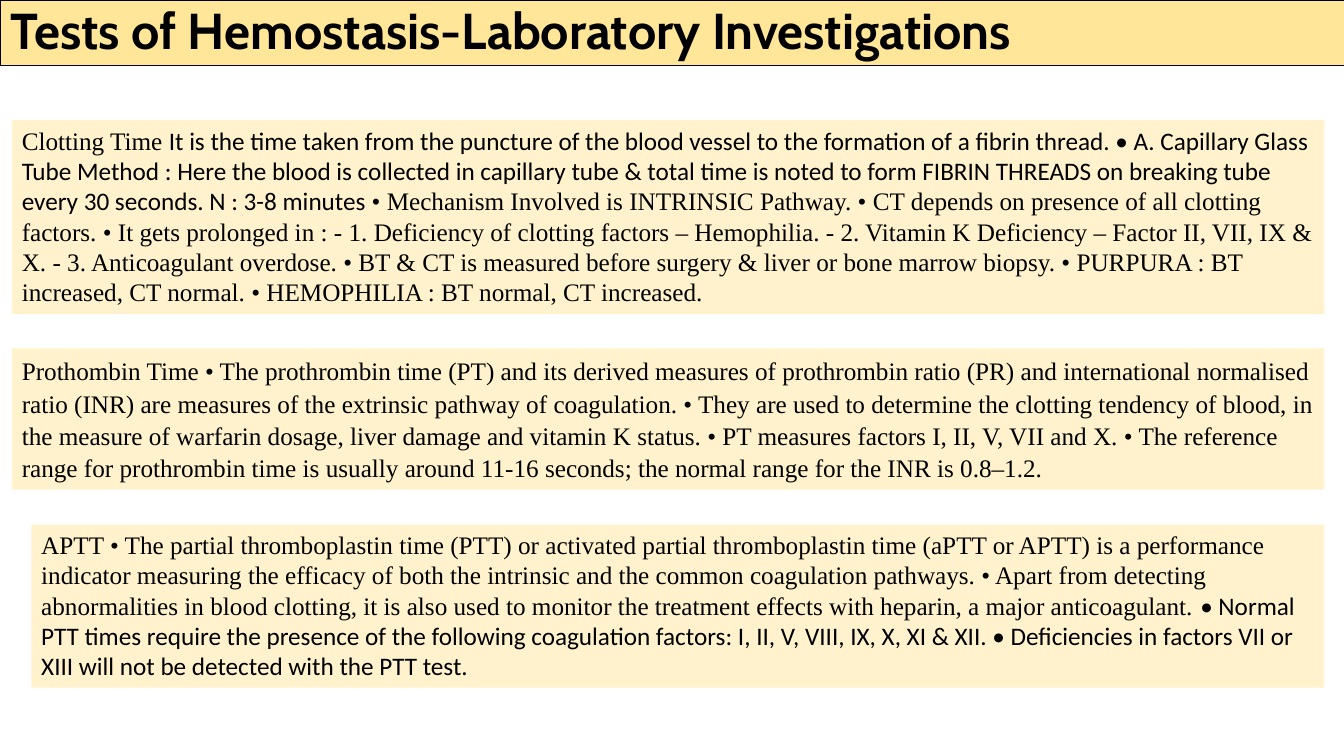
"""Build the slide on laboratory tests of hemostasis."""
from pptx import Presentation
from pptx.dml.color import RGBColor
from pptx.enum import text
from pptx.util import Cm, Pt

BLACK = RGBColor(0x00, 0x00, 0x00)
GOLD = RGBColor(0xFF, 0xE6, 0x99)
CREAM = RGBColor(0xFF, 0xF2, 0xCC)
SERIF, SANS = "Times New Roman", "Calibri"
RIGHT_EDGE = 33.38

TITLE = "Tests of Hemostasis-Laboratory Investigations"
TESTS = [
    {"left": 0.3, "top": 3.03, "height": 4.88, "spacing": 1.0, "after": 0, "spans": [
        (SERIF, "Clotting Time "),
        (SANS, "It is the time taken from the puncture of the blood vessel to the formation "
               "of a fibrin thread. • A. Capillary Glass Tube Method : Here the blood is "
               "collected in capillary tube & total time is noted to form FIBRIN THREADS on "
               "breaking tube every 30 seconds. N : 3-8 minutes "),
        (SERIF, "• Mechanism Involved is INTRINSIC Pathway. • CT depends on presence of all "
                "clotting factors. • It gets prolonged in : - 1. Deficiency of clotting "
                "factors – Hemophilia. - 2. Vitamin K Deficiency – Factor II, VII, IX & X. "
                "- 3. Anticoagulant overdose. • BT & CT is measured before surgery & liver "
                "or bone marrow biopsy. • PURPURA : BT increased, CT normal. "
                "• HEMOPHILIA : BT normal, CT increased."),
    ]},
    {"left": 0.3, "top": 8.78, "height": 3.56, "spacing": 1.07, "after": 8, "spans": [
        (SERIF, "Prothombin Time • The prothrombin time (PT) and its derived measures of "
                "prothrombin ratio (PR) and international normalised ratio (INR) are "
                "measures of the extrinsic pathway of coagulation. • They are used to "
                "determine the clotting tendency of blood, in the measure of warfarin "
                "dosage, liver damage and vitamin K status. • PT measures factors I, II, V, "
                "VII and X. • The reference range for prothrombin time is usually around "
                "11-16 seconds; the normal range for the INR is 0.8–1.2."),
    ]},
    {"left": 0.79, "top": 13.22, "height": 4.11, "spacing": 1.0, "after": 0, "spans": [
        (SERIF, "APTT • The partial thromboplastin time (PTT) or activated partial "
                "thromboplastin time (aPTT or APTT) is a performance indicator measuring "
                "the efficacy of both the intrinsic and the common coagulation pathways. "
                "• Apart from detecting abnormalities in blood clotting, it is also used to "
                "monitor the treatment effects with heparin, a major anticoagulant. "),
        (SANS, "• Normal PTT times require the presence of the following coagulation "
               "factors: I, II, V, VIII, IX, X, XI & XII. • Deficiencies in factors VII or "
               "XIII will not be detected with the PTT test."),
    ]},
]


def place_title(page):
    """Fill the title band across the top of the page."""
    title = page.shapes.title
    title.left, title.top, title.width, title.height = Cm(0), Cm(0), Cm(34.16), Cm(1.65)
    title.fill.solid()
    title.fill.fore_color.rgb = GOLD
    title.line.color.rgb = BLACK
    title.line.width = Pt(0.75)
    frame = title.text_frame
    frame.text = TITLE
    frame.auto_size = text.MSO_AUTO_SIZE.NONE
    frame.vertical_anchor = text.MSO_ANCHOR.MIDDLE
    para = frame.paragraphs[0]
    para.alignment = text.PP_ALIGN.LEFT
    para.line_spacing = 0.9
    para.font.name, para.font.size, para.font.bold = "Cabin", Pt(36), True
    para.font.color.rgb = BLACK


def add_test(page, test):
    """Add one cream box describing a test."""
    box = page.shapes.add_textbox(Cm(test["left"]), Cm(test["top"]),
                                  Cm(RIGHT_EDGE - test["left"]), Cm(test["height"]))
    box.fill.solid()
    box.fill.fore_color.rgb = CREAM
    frame = box.text_frame
    frame.word_wrap = True
    frame.auto_size = text.MSO_AUTO_SIZE.SHAPE_TO_FIT_TEXT
    para = frame.paragraphs[0]
    para.line_spacing = test["spacing"]
    para.space_after = Pt(test["after"])
    para.font.size = Pt(18)
    para.font.color.rgb = BLACK
    for font_name, words in test["spans"]:
        span = para.add_run()
        span.text = words
        span.font.name = font_name


def main():
    """Create the deck and save it."""
    deck = Presentation()
    deck.slide_width, deck.slide_height = Cm(33.87), Cm(19.05)
    page = deck.slides.add_slide(deck.slide_layouts[5])
    place_title(page)
    for test in TESTS:
        add_test(page, test)
    deck.save("out.pptx")


if __name__ == "__main__":
    main()
